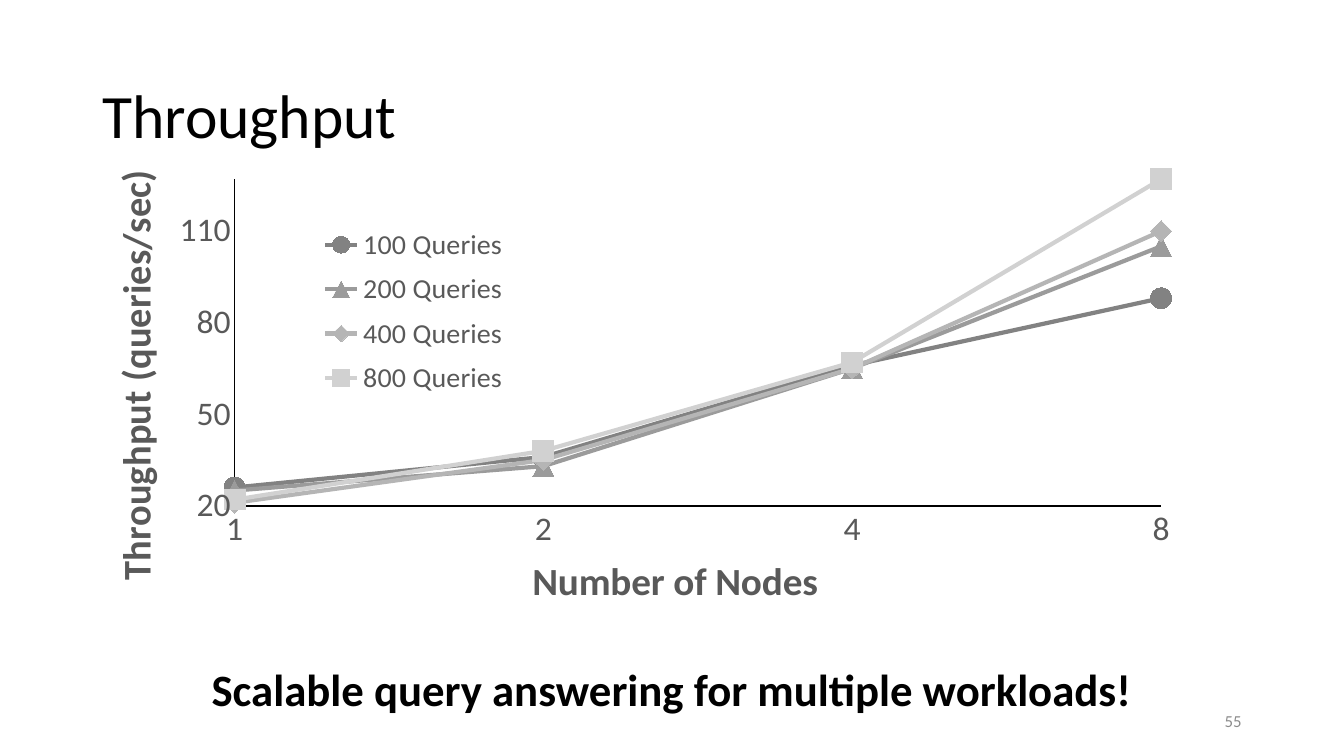
from lxml import etree
from pptx import Presentation
from pptx.chart.data import CategoryChartData
from pptx.dml.color import RGBColor
from pptx.enum.chart import XL_CHART_TYPE, XL_LEGEND_POSITION, XL_MARKER_STYLE, XL_TICK_MARK
from pptx.enum.text import MSO_ANCHOR, PP_ALIGN
from pptx.oxml.ns import qn
from pptx.util import Pt

BLACK = RGBColor(0x00, 0x00, 0x00)
LABEL_GRAY = RGBColor(0x59, 0x59, 0x59)
NUMBER_GRAY = RGBColor(0x8C, 0x8C, 0x8C)
FONT = "Calibri"

WORKLOADS = [
    ("100 Queries", (26, 36, 66, 88), RGBColor(0x82, 0x82, 0x82), XL_MARKER_STYLE.CIRCLE),
    ("200 Queries", (25, 33, 65, 105), RGBColor(0x9B, 0x9B, 0x9B), XL_MARKER_STYLE.TRIANGLE),
    ("400 Queries", (21, 35, 65, 110), RGBColor(0xB5, 0xB5, 0xB5), XL_MARKER_STYLE.DIAMOND),
    ("800 Queries", (22, 38, 67, 127), RGBColor(0xD1, 0xD1, 0xD1), XL_MARKER_STYLE.SQUARE),
]


def set_layout(element, index, inner=False, **fractions):
    """Place a chart part at fractions (x, y, w, h) of the chart's size."""
    for old_layout in element.findall(qn("c:layout")):
        element.remove(old_layout)
    layout = etree.Element(qn("c:layout"))
    manual = etree.SubElement(layout, qn("c:manualLayout"))
    if inner:
        etree.SubElement(manual, qn("c:layoutTarget"), val="inner")
    for side in ("x", "y"):
        etree.SubElement(manual, qn(f"c:{side}Mode"), val="edge")
    for side, fraction in fractions.items():
        etree.SubElement(manual, qn(f"c:{side}"), val=str(fraction))
    element.insert(index, layout)


def add_text(slide, text, box, size, color, align, anchor, bold=False):
    text_frame = slide.shapes.add_textbox(*(Pt(length) for length in box)).text_frame
    text_frame.word_wrap = True
    text_frame.vertical_anchor = anchor
    paragraph = text_frame.paragraphs[0]
    paragraph.text = text
    paragraph.alignment = align
    paragraph.font.name = FONT
    paragraph.font.size = Pt(size)
    paragraph.font.bold = bold
    paragraph.font.color.rgb = color


presentation = Presentation()
presentation.slide_width = Pt(960)
presentation.slide_height = Pt(540)
slide = presentation.slides.add_slide(presentation.slide_layouts[6])

# Throughput chart
throughput = CategoryChartData()
throughput.categories = ["1", "2", "4", "8"]
for name, values, _, _ in WORKLOADS:
    throughput.add_series(name, values)
chart = slide.shapes.add_chart(
    XL_CHART_TYPE.LINE_MARKERS, Pt(57), Pt(25), Pt(795.5), Pt(416), throughput
).chart
chart.has_title = False
chart.font.name = FONT
chart.font.size = Pt(10)
chart.font.color.rgb = BLACK
chart.plots[0].vary_by_categories = False
set_layout(chart.plots[0]._element.getparent(), 0, inner=True, x=0.139, y=0.253, w=0.832, h=0.573)

for series, (_, _, color, marker_style) in zip(chart.plots[0].series, WORKLOADS):
    series.smooth = False
    series.format.line.color.rgb = color
    series.format.line.width = Pt(3)
    series.marker.style = marker_style
    series.marker.size = 15
    series.marker.format.fill.solid()
    series.marker.format.fill.fore_color.rgb = color
    series.marker.format.line.color.rgb = color

# Axes
nodes_axis, rate_axis = chart.category_axis, chart.value_axis
for axis, title, x, y in (
    (nodes_axis, "Number of Nodes", 0.4, 0.9),
    (rate_axis, "Throughput (queries/sec)", 0.02, 0.24),
):
    axis.has_major_gridlines = False
    axis.major_tick_mark = XL_TICK_MARK.NONE
    axis.minor_tick_mark = XL_TICK_MARK.NONE
    axis.format.line.color.rgb = BLACK
    axis.format.line.width = Pt(1)
    title_paragraph = axis.axis_title.text_frame.paragraphs[0]
    title_paragraph.text = title
    title_paragraph.font.bold = True
    for font, size in ((axis.tick_labels.font, 24), (title_paragraph.font, 28)):
        font.name = FONT
        font.size = Pt(size)
        font.color.rgb = LABEL_GRAY
    set_layout(axis.axis_title._element, 1, x=x, y=y)
rate_axis.minimum_scale = 20
rate_axis.maximum_scale = 127
rate_axis.major_unit = 30

# The first category sits on the value axis
rate_xml = rate_axis._element
for old_crossing in rate_xml.findall(qn("c:crossBetween")):
    rate_xml.remove(old_crossing)
crossing = etree.Element(qn("c:crossBetween"), val="midCat")
rate_xml.find(qn("c:crosses")).addnext(crossing)

# Legend
chart.has_legend = True
legend = chart.legend
legend.position = XL_LEGEND_POSITION.BOTTOM
legend.include_in_layout = False
legend.font.name = FONT
legend.font.size = Pt(20)
legend.font.color.rgb = LABEL_GRAY
set_layout(legend._element, 1, x=0.21, y=0.32, w=0.18, h=0.33)

# Title, slide number and conclusion
add_text(slide, "Throughput", (66, 29, 894, 104.5), 44, BLACK, PP_ALIGN.LEFT, MSO_ANCHOR.MIDDLE)
add_text(slide, "55", (678, 500.5, 216, 28.75), 12, NUMBER_GRAY, PP_ALIGN.RIGHT, MSO_ANCHOR.MIDDLE)
add_text(slide, "Scalable query answering for multiple workloads!", (0, 469, 960, 46),
         32, BLACK, PP_ALIGN.CENTER, MSO_ANCHOR.TOP, bold=True)

presentation.save("out.pptx")
